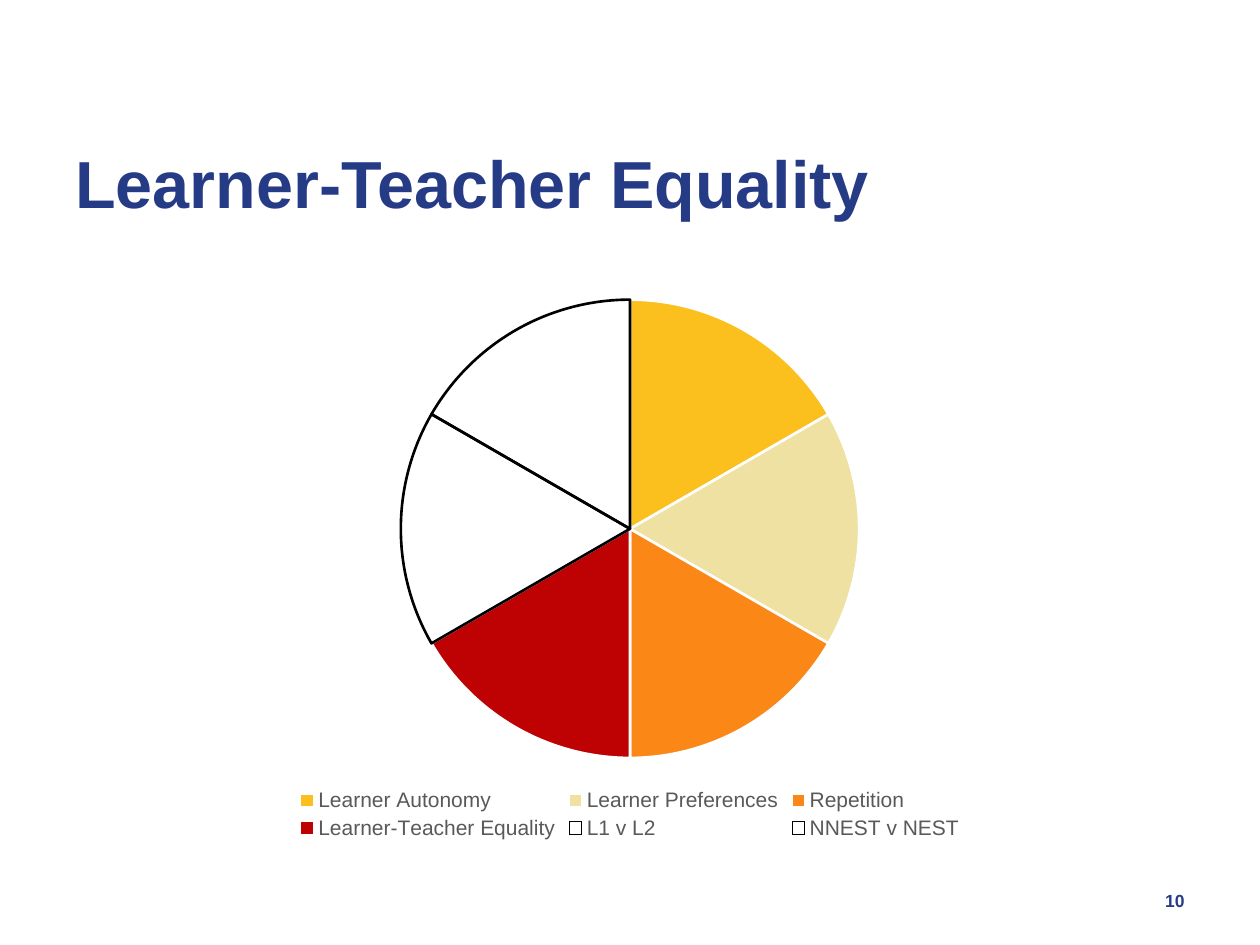
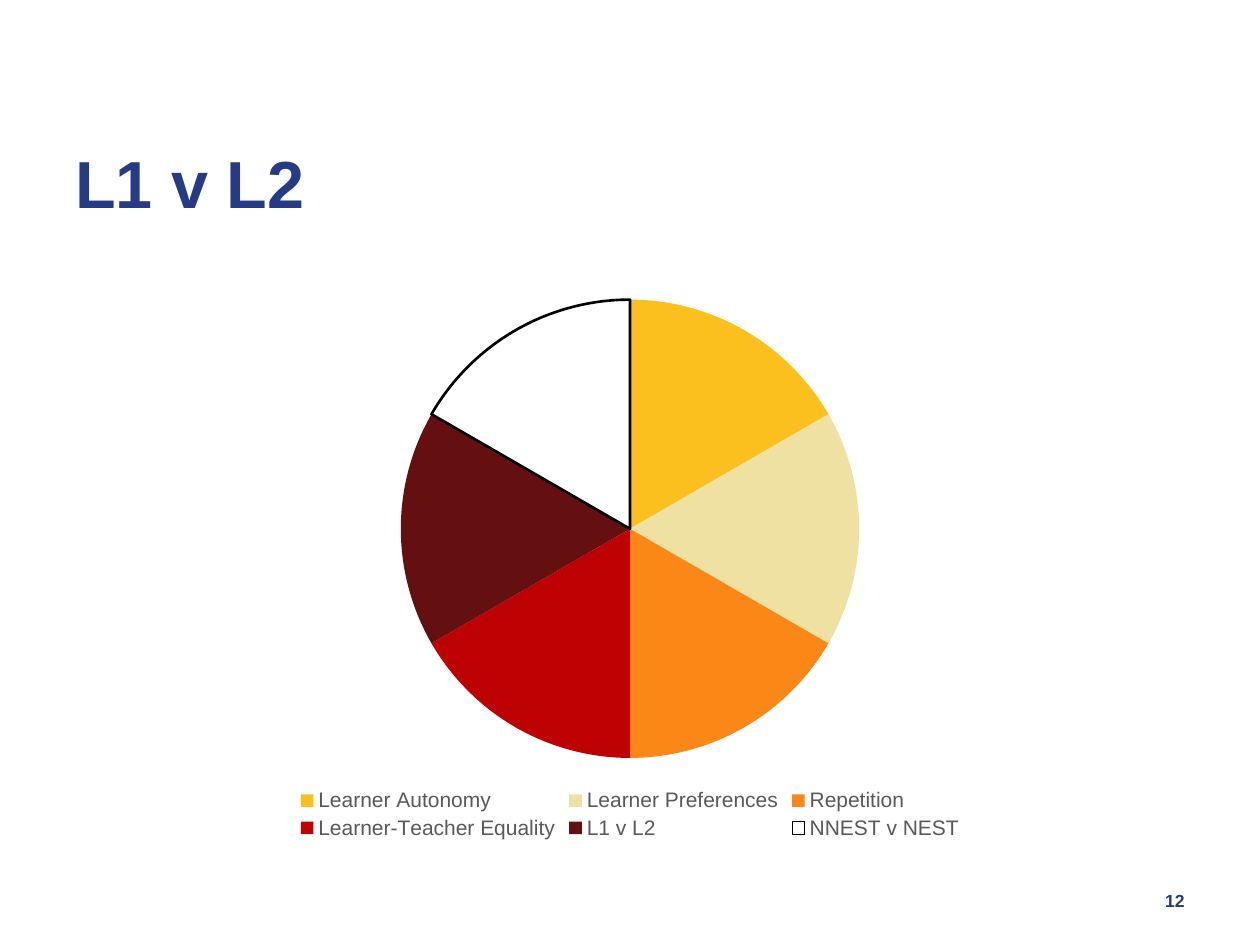
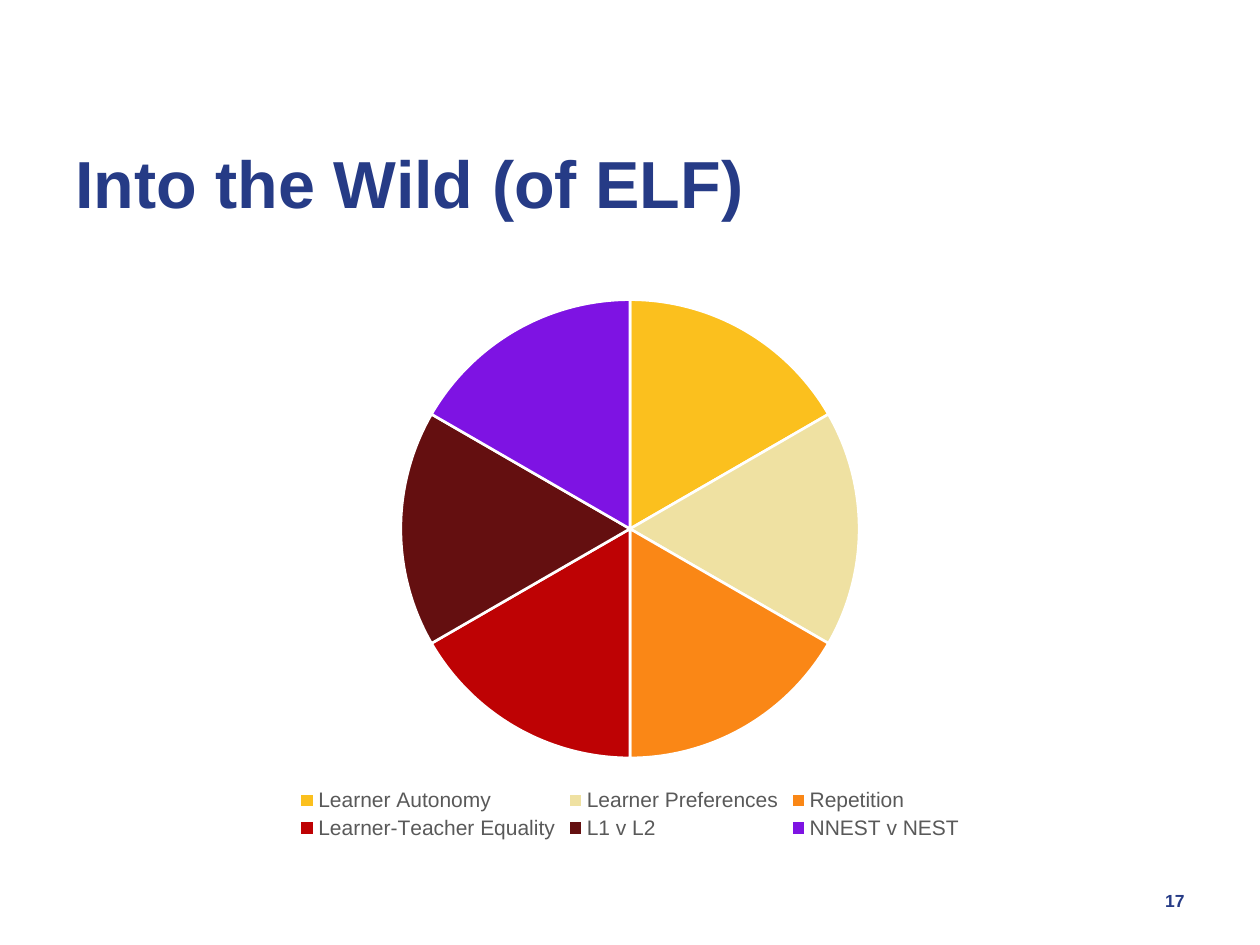
from pptx import Presentation
from pptx.chart.data import CategoryChartData
from pptx.dml.color import RGBColor
from pptx.enum.chart import XL_CHART_TYPE, XL_LEGEND_POSITION
from pptx.enum.text import MSO_ANCHOR, PP_ALIGN
from pptx.util import Inches, Pt

PIE = XL_CHART_TYPE.PIE
LEGEND_BOTTOM = XL_LEGEND_POSITION.BOTTOM
ANCHOR_BOTTOM, ANCHOR_MIDDLE = MSO_ANCHOR.BOTTOM, MSO_ANCHOR.MIDDLE
ALIGN_LEFT, ALIGN_RIGHT = PP_ALIGN.LEFT, PP_ALIGN.RIGHT

FONT = "Arial"
COLOURS = {
    "heading": "263B86",
    "legend": "595959",
    "black": "000000",
    "white": "FFFFFF",
}
TOPICS = {
    "Learner Autonomy": "FBC01E",
    "Learner Preferences": "EFE1A2",
    "Repetition": "FA8716",
    "Learner-Teacher Equality": "BE0204",
    "L1 v L2": "640F10",
    "NNEST v NEST": "7E13E3",
}
TOPIC_SHARE = 17

# Title, page number, topics covered so far, colour of the gaps between slices
SLIDES = [
    ("Learner-Teacher Equality", 10, 4, "white"),
    ("L1 v L2", 12, 5, None),
    ("Into the Wild (of ELF)", 17, 6, "white"),
]


class TopicDeck:
    def __init__(self):
        self.deck = Presentation()
        self.deck.slide_width = Inches(10)
        self.deck.slide_height = Inches(7.5)
        self.slide = None

    def add_slide(self):
        self.slide = self.deck.slides.add_slide(self.deck.slide_layouts[6])

    def style_font(self, font, size, colour):
        font.name = FONT
        font.size = Pt(size)
        font.color.rgb = RGBColor.from_string(COLOURS[colour])

    def add_text(self, text, left, top, width, height, size, anchor, align):
        box = self.slide.shapes.add_textbox(
            Inches(left), Inches(top), Inches(width), Inches(height))
        frame = box.text_frame
        frame.word_wrap = True
        frame.vertical_anchor = anchor
        frame.text = text
        para = frame.paragraphs[0]
        para.alignment = align
        span = para.runs[0]
        self.style_font(span.font, size, "heading")
        span.font.bold = True
        return para

    def add_title(self, text):
        para = self.add_text(text, 0.5, 0.55, 7.73, 1.27, 38, ANCHOR_BOTTOM, ALIGN_LEFT)
        para.line_spacing = 0.9

    def add_page_number(self, number):
        self.add_text(str(number), 7.17, 6.95, 2.33, 0.4, 10, ANCHOR_MIDDLE, ALIGN_RIGHT)

    def add_topic_pie(self, covered, gap):
        """Draw equal slices, filling only the topics covered so far."""
        data = CategoryChartData()
        data.categories = list(TOPICS)
        data.add_series("Series 1", [TOPIC_SHARE] * len(TOPICS))
        chart = self.slide.shapes.add_chart(
            PIE, Inches(0.5), Inches(2.24), Inches(9), Inches(4.46), data).chart
        chart.has_title = False
        self.style_font(chart.font, 10, "black")
        chart.has_legend = True
        chart.legend.position = LEGEND_BOTTOM
        chart.legend.include_in_layout = False
        self.style_font(chart.legend.font, 12, "legend")

        plot = chart.plots[0]
        plot.vary_by_categories = True
        for index, colour in enumerate(TOPICS.values()):
            style = plot.series[0].points[index].format
            if index < covered:
                style.fill.solid()
                style.fill.fore_color.rgb = RGBColor.from_string(colour)
                self.set_outline(style.line, gap)
            else:
                style.fill.background()
                self.set_outline(style.line, "black")

    def set_outline(self, line, colour):
        if colour is None:
            line.fill.background()
        else:
            line.color.rgb = RGBColor.from_string(COLOURS[colour])
            line.width = Pt(1.5)


def main():
    topics = TopicDeck()
    for title, number, covered, gap in SLIDES:
        topics.add_slide()
        topics.add_title(title)
        topics.add_topic_pie(covered, gap)
        topics.add_page_number(number)
    topics.deck.save("out.pptx")


if __name__ == "__main__":
    main()
